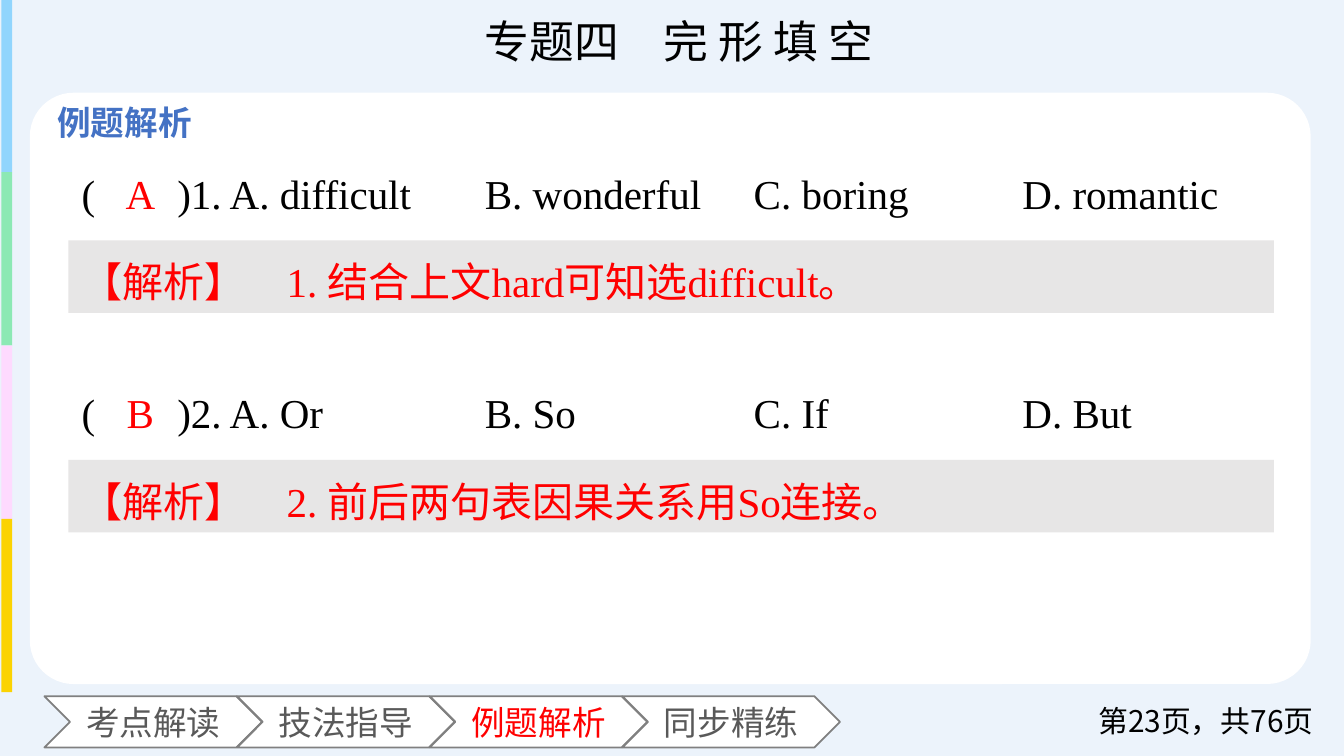
"""Build the worked-examples slide of the cloze-test lesson."""
import pptx
import pptx.util
import pptx.dml.color
import pptx.enum.shapes
import pptx.enum.text
import pptx.oxml.ns
import lxml.etree

Pt = pptx.util.Pt
KIND = pptx.enum.shapes.MSO_SHAPE
ALIGN = pptx.enum.text.PP_ALIGN
ANCHOR = pptx.enum.text.MSO_ANCHOR

HUES = {
    "back": "ECF3FB", "white": "FFFFFF", "black": "000000", "red": "FF0000",
    "blue": "4472C4", "dark": "595959", "edge": "808080", "bar": "E7E6E6",
    "sky": "91D5FD", "mint": "8CE9B4", "pink": "FEDAFE", "gold": "FBD302",
}
SANS, SERIF = "Noto Sans CJK SC", "Times New Roman"

TITLE = "专题四　完 形 填 空"
HEAD = "例题解析"
PAGE = "第23页，共76页"
STRIPES = ["sky", "mint", "pink", "gold"]
STEPS = ["考点解读", "技法指导", "例题解析", "同步精练"]
ITEMS = [
    ("A", ["difficult", "wonderful", "boring", "romantic"],
     "结合上文hard可知选difficult。"),
    ("B", ["Or", "So", "If", "But"], "前后两句表因果关系用So连接。"),
]
TABS = [216, 360, 504]


def tint(name):
    return pptx.dml.color.RGBColor.from_string(HUES[name])


def draw(slide, kind, box, fill, edge=None):
    shape = slide.shapes.add_shape(kind, *map(Pt, box))
    shape.shadow.inherit = False
    shape.fill.solid()
    shape.fill.fore_color.rgb = tint(fill)
    if edge:
        shape.line.color.rgb = tint(edge)
        shape.line.width = Pt(1)
    else:
        shape.line.fill.background()
    return shape


def write(shape, text, size, face, hue, align=ALIGN.LEFT, anchor=ANCHOR.TOP,
          bold=False, space=None, tabs=()):
    frame = shape.text_frame
    frame.word_wrap = True
    frame.vertical_anchor = anchor
    para = frame.paragraphs[0]
    para.text = text
    para.alignment = align
    para.line_spacing = space
    props = para._p.get_or_add_pPr()
    qn = pptx.oxml.ns.qn
    if tabs:
        stops = lxml.etree.SubElement(props, qn("a:tabLst"))
        for stop in tabs:
            lxml.etree.SubElement(stops, qn("a:tab"), pos=str(Pt(stop)), algn="l")
    font = para.font
    font.size, font.name, font.bold = Pt(size), face, bold
    font.color.rgb = tint(hue)
    if face == SANS:
        east = lxml.etree.Element(qn("a:ea"), typeface=face)
        props.find(qn("a:defRPr")).find(qn("a:latin")).addnext(east)


def label(slide, box, *args, **style):
    write(slide.shapes.add_textbox(*map(Pt, box)), *args, **style)


def frame(slide):
    draw(slide, KIND.RECTANGLE, (0, 0, 720, 405), "back")
    label(slide, (126.7, 3.6, 473.8, 36), TITLE, 24, SERIF, "black", ALIGN.CENTER)
    for i, hue in enumerate(STRIPES):
        draw(slide, KIND.RECTANGLE, (0.7, 92.9 * i - 0.7, 5.8, 92.9), hue)
    panel = draw(slide, KIND.ROUNDED_RECTANGLE, (16, 49.7, 686.2, 316.8), "white")
    panel.adjustments[0] = 0.074
    label(slide, (23.6, 51.1, 92.9, 28.8), HEAD, 18, SANS, "blue", bold=True)
    for i, step in enumerate(STEPS):
        box = (23.8 + 103.2 * i, 373, 116.6, 27.4)
        shape = draw(slide, KIND.CHEVRON, box, "white", "edge")
        text = shape.text_frame
        text.margin_left = text.margin_right = 0
        text.margin_top = text.margin_bottom = 0
        write(shape, step, 18, SANS, "red" if step == HEAD else "dark",
              ALIGN.CENTER, ANCHOR.MIDDLE)
    label(slide, (564.5, 375.1, 146.2, 21.6), PAGE, 16, SANS, "black",
          ALIGN.RIGHT, ANCHOR.MIDDLE)


def quiz(slide):
    for i, (key, words, note) in enumerate(ITEMS):
        top = 81.4 + 117.6 * i
        picks = "\t".join(f"{mark}. {word}" for mark, word in zip("ABCD", words))
        label(slide, (36.7, top, 645.8, 38.9), f"(　　){i + 1}. {picks}",
              22, SERIF, "black", space=1.2, tabs=TABS)
        bar = draw(slide, KIND.RECTANGLE, (36.7, top + 47.4, 645.8, 38.9), "bar")
        write(bar, f"【解析】　{i + 1}. {note}", 22, SERIF, "red", space=1.2)
        label(slide, (54.7, top + 5.2, 41, 33.8), key, 22, SERIF, "red", ALIGN.CENTER)


def main():
    deck = pptx.Presentation()
    deck.slide_width, deck.slide_height = Pt(720), Pt(405)
    slide = deck.slides.add_slide(deck.slide_layouts[6])
    frame(slide)
    quiz(slide)
    deck.save("out.pptx")


if __name__ == "__main__":
    main()
